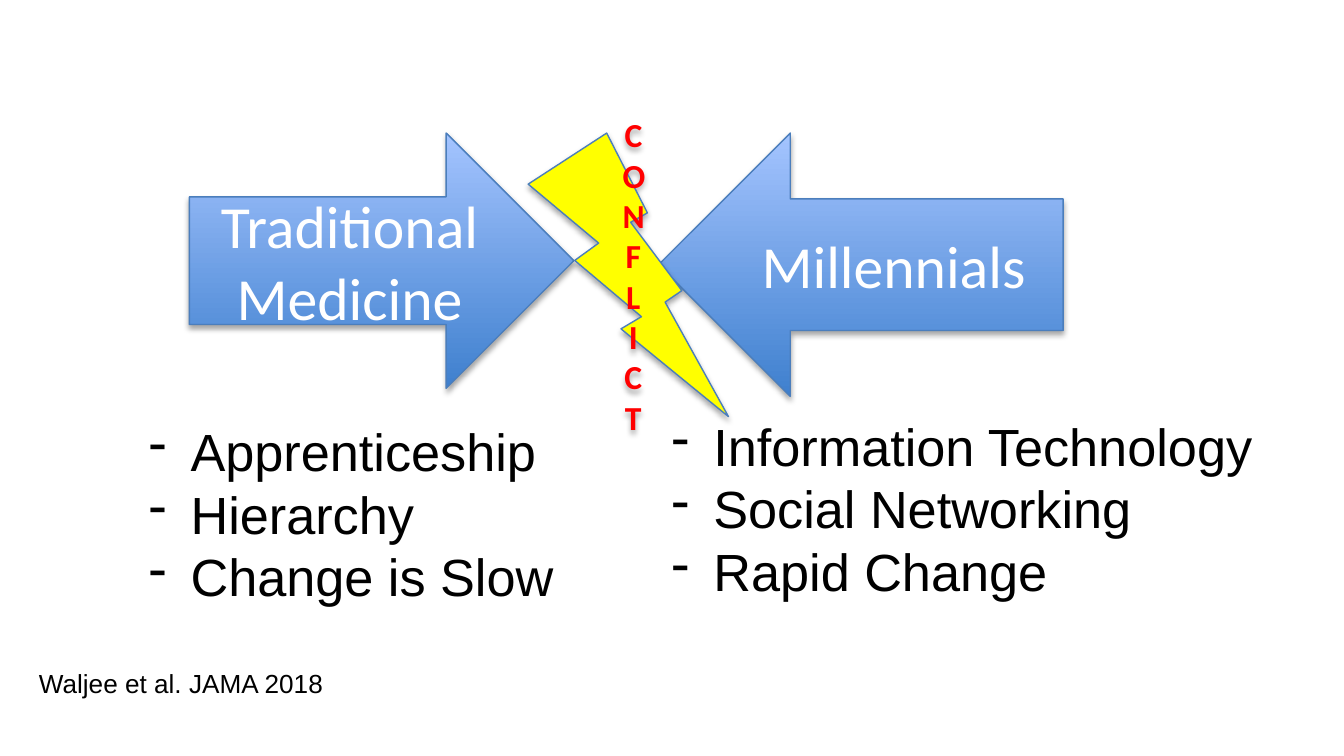
from dataclasses import dataclass

from lxml.etree import SubElement
from pptx import Presentation
from pptx.dml.color import RGBColor as RGB
from pptx.enum.shapes import MSO_SHAPE as Shape
from pptx.enum.text import MSO_ANCHOR as Anchor, PP_ALIGN as Align
from pptx.oxml.ns import qn
from pptx.util import Inches, Pt


@dataclass(frozen=True)
class Theme:
    body_font: str = "Arial"
    shape_font: str = "Calibri"
    black: RGB = RGB(0, 0, 0)
    white: RGB = RGB(255, 255, 255)
    red: RGB = RGB(255, 0, 0)
    yellow: RGB = RGB(255, 255, 0)
    outline: RGB = RGB(0x4B, 0x7E, 0xBC)
    arrow_bottom: RGB = RGB(0x3F, 0x80, 0xCE)
    arrow_top: RGB = RGB(0xA4, 0xC4, 0xFF)
    arrow_size: int = 32
    list_size: int = 28
    conflict_size: int = 18
    source_size: int = 14


THEME = Theme()


def write_text(shape, lines, *, size, font=THEME.body_font, color=THEME.black,
               bold=False, align=Align.LEFT, anchor=Anchor.TOP, bullet=None):
    frame = shape.text_frame
    frame.word_wrap = True
    frame.vertical_anchor = anchor
    for index, line in enumerate(lines):
        paragraph = frame.paragraphs[0] if index == 0 else frame.add_paragraph()
        paragraph.alignment = align
        if bullet:
            add_bullet(paragraph, bullet)
        run = paragraph.add_run()
        run.text = line
        run.font.name = font
        run.font.size = Pt(size)
        run.font.bold = bold
        run.font.color.rgb = color


def add_bullet(paragraph, character):
    properties = paragraph._p.get_or_add_pPr()
    indent = Inches(0.31)
    properties.set("marL", str(indent))
    properties.set("indent", str(-indent))
    SubElement(properties, qn("a:buFontTx"))
    SubElement(properties, qn("a:buChar"), char=character)


def add_text_box(slide, box, lines, **text_format):
    text_box = slide.shapes.add_textbox(*map(Inches, box))
    write_text(text_box, lines, **text_format)


def add_bullet_list(slide, box, items):
    add_text_box(slide, box, items, size=THEME.list_size, bullet="-")


def add_soft_shadow(shape):
    shape.shadow.inherit = False
    effects = shape._element.spPr.find(qn("a:effectLst"))
    shadow = SubElement(effects, qn("a:outerShdw"), blurRad=str(Pt(3.1)),
                        dist=str(Pt(1.8)), dir="5400000", rotWithShape="0")
    color = SubElement(shadow, qn("a:srgbClr"), val="000000")
    SubElement(color, qn("a:alpha"), val="35000")


def add_outlined_shape(slide, kind, box, lines, **text_format):
    shape = slide.shapes.add_shape(kind, *map(Inches, box))
    shape.line.color.rgb = THEME.outline
    shape.line.width = Pt(0.75)
    add_soft_shadow(shape)
    write_text(shape, lines, font=THEME.shape_font, align=Align.CENTER,
               anchor=Anchor.MIDDLE, **text_format)
    return shape


def add_arrow(slide, kind, box, lines):
    arrow = add_outlined_shape(slide, kind, box, lines,
                               size=THEME.arrow_size, color=THEME.white)
    arrow.fill.gradient()
    arrow.fill.gradient_angle = 90
    colors = (THEME.arrow_bottom, THEME.arrow_top)
    for stop, color in zip(arrow.fill.gradient_stops, colors):
        stop.color.rgb = color


def add_conflict_bolt(slide, box):
    """The bolt's narrow text area stacks the word one letter to a line."""
    bolt = add_outlined_shape(slide, Shape.LIGHTNING_BOLT, box, ["CONFLICT"],
                              size=THEME.conflict_size, color=THEME.red, bold=True)
    bolt.fill.solid()
    bolt.fill.fore_color.rgb = THEME.yellow


def main():
    presentation = Presentation()
    presentation.slide_width = Inches(10)
    presentation.slide_height = Inches(10) * 9 // 16
    slide = presentation.slides.add_slide(presentation.slide_layouts[6])

    add_bullet_list(slide, (1.01, 3.07, 3.25, 1.5),
                    ["Apprenticeship", "Hierarchy", "Change is Slow"])
    add_bullet_list(slide, (4.9, 3.03, 4.6, 1.5),
                    ["Information Technology", "Social Networking", "Rapid Change"])
    add_arrow(slide, Shape.RIGHT_ARROW, (1.41, 0.99, 2.86, 1.9),
              ["Traditional", "Medicine"])
    add_arrow(slide, Shape.LEFT_ARROW, (4.9, 0.99, 3.01, 1.96), ["Millennials"])
    add_conflict_bolt(slide, (3.93, 0.99, 1.49, 2.11))
    add_text_box(slide, (0.19, 4.92, 2.38, 0.34), ["Waljee et al. JAMA 2018"],
                 size=THEME.source_size)

    presentation.save("out.pptx")


if __name__ == "__main__":
    main()
